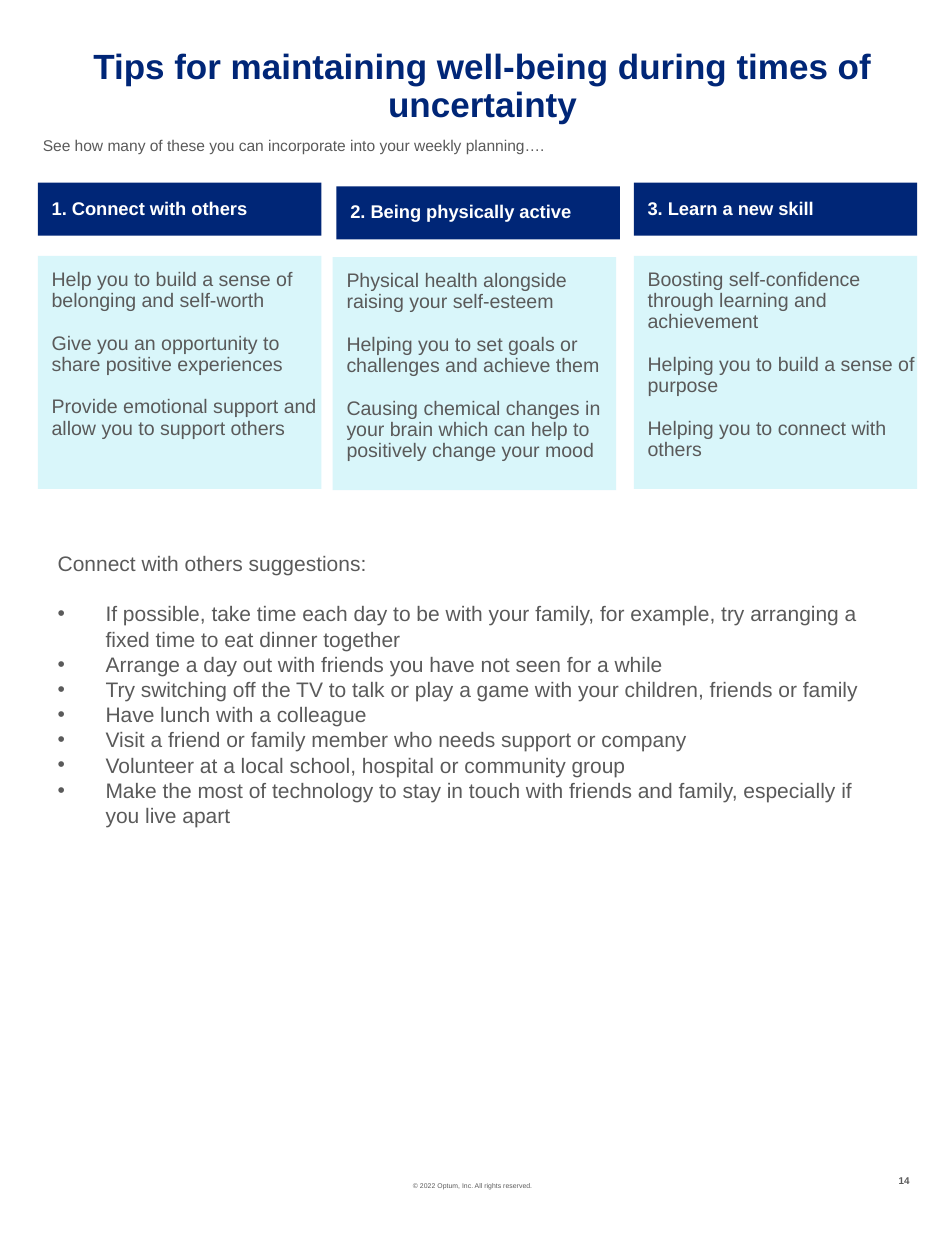
from pptx import Presentation
from pptx.dml.color import RGBColor
from pptx.enum.shapes import MSO_SHAPE
from pptx.enum.text import MSO_ANCHOR, PP_ALIGN
from pptx.oxml.ns import qn
from pptx.util import Inches, Pt
from lxml import etree

RECTANGLE = MSO_SHAPE.RECTANGLE
TOP, MIDDLE = MSO_ANCHOR.TOP, MSO_ANCHOR.MIDDLE
LEFT, CENTER, RIGHT = PP_ALIGN.LEFT, PP_ALIGN.CENTER, PP_ALIGN.RIGHT
WIDTH, HEIGHT = 7.5, 10
NAVY, AQUA, GREY, WHITE = "002677", "D9F6FA", "5A5A5A", "FFFFFF"


def color(value):
    return RGBColor.from_string(value)


class Page:
    """Style and current slide; places are shares of the slide's size."""
    font = "Arial"

    def __init__(self, deck):
        self.slide = deck.slides.add_slide(deck.slide_layouts[6])

    def place(self, left, top, width, height):
        return [Inches(left * WIDTH), Inches(top * HEIGHT),
                Inches(width * WIDTH), Inches(height * HEIGHT)]

    def fill_text(self, box, lines, size, ink=GREY, bold=False, align=LEFT, anchor=TOP,
                  insets=(0, 0, 0, 0), spacing=None, gap=0, wrap=True):
        frame = box.text_frame
        frame.word_wrap = wrap
        frame.vertical_anchor = anchor
        (frame.margin_left, frame.margin_top,
         frame.margin_right, frame.margin_bottom) = map(Inches, insets)
        frame.text = "\n".join(lines)
        for index, para in enumerate(frame.paragraphs):
            para.alignment = align
            if spacing:
                para.line_spacing = spacing
            if index and gap:
                para.space_before = Pt(gap)
            for span in para.runs:
                span.font.name = self.font
                span.font.size = Pt(size)
                span.font.bold = bold
                span.font.color.rgb = color(ink)
        return frame

    def text(self, place, lines, size, **style):
        box = self.slide.shapes.add_textbox(*self.place(*place))
        return self.fill_text(box, lines, size, **style)

    def panel(self, place, fill, lines, size, **style):
        box = self.slide.shapes.add_shape(RECTANGLE, *self.place(*place))
        box.shadow.inherit = False
        box.fill.solid()
        box.fill.fore_color.rgb = color(fill)
        box.line.fill.background()
        return self.fill_text(box, lines, size, spacing=0.9, **style)

    def bullet(self, para, indent):
        props = para._p.get_or_add_pPr()
        props.set("marL", str(Inches(indent)))
        props.set("indent", str(-Inches(indent)))
        etree.SubElement(props, qn("a:buFont")).set("typeface", self.font)
        etree.SubElement(props, qn("a:buChar")).set("char", "•")


# Heading, benefits, then left edges and tops of the header and the card
COLUMNS = [
    ("1. Connect with others",
     ["Help you to build a sense of belonging and self-worth",
      "Give you an opportunity to share positive experiences",
      "Provide emotional support and allow you to support others"],
     (0.3, 1.45), (0.3, 2.03)),
    ("2. Being physically active",
     ["Physical health alongside raising your self-esteem",
      "Helping you to set goals or challenges and achieve them",
      "Causing chemical changes in your brain which can help to "
      "positively change your mood"],
     (2.67, 1.48), (2.64, 2.04)),
    ("3. Learn a new skill",
     ["Boosting self-confidence through learning and achievement",
      "Helping you to build a sense of purpose",
      "Helping you to connect with others"],
     (5.03, 1.45), (5.03, 2.03)),
]
SUGGESTIONS = [
    "If possible, take time each day to be with your family, for example, "
    "try arranging a fixed time to eat dinner together",
    "Arrange a day out with friends you have not seen for a while",
    "Try switching off the TV to talk or play a game with your children, friends or family",
    "Have lunch with a colleague",
    "Visit a friend or family member who needs support or company",
    "Volunteer at a local school, hospital or community group",
    "Make the most of technology to stay in touch with friends and family, "
    "especially if you live apart",
]


def main():
    deck = Presentation()
    deck.slide_width, deck.slide_height = Inches(WIDTH), Inches(HEIGHT)
    page = Page(deck)

    # Footer
    page.text((2.89 / WIDTH, 9.38 / HEIGHT, 1.72 / WIDTH, 0.07 / HEIGHT),
              ["© 2022 Optum, Inc. All rights reserved."], 3.9, align=CENTER)
    page.text((7.12 / WIDTH, 9.32 / HEIGHT, 0.1 / WIDTH, 0.09 / HEIGHT), ["14"], 5.6,
              bold=True, align=RIGHT, wrap=False)

    # Title and lead-in
    page.text((0.22 / WIDTH, 0.39 / HEIGHT, 7.22 / WIDTH, 0.61 / HEIGHT),
              ["Tips for maintaining well-being during times of uncertainty"], 20,
              ink=NAVY, bold=True, align=CENTER, spacing=0.9)
    page.text((0.34 / WIDTH, 1.11 / HEIGHT, 6.96 / WIDTH, 0.13 / HEIGHT),
              ["See how many of these you can incorporate into your weekly planning…."],
              8.9, spacing=0.8)

    # Three columns: header above card
    for heading, benefits, (head_left, head_top), (card_left, card_top) in COLUMNS:
        page.panel((head_left / WIDTH, head_top / HEIGHT, 0.3, 0.42 / HEIGHT), NAVY,
                   [heading], 10.5, ink=WHITE, bold=True, anchor=MIDDLE,
                   insets=(0.11, 0, 0, 0))
        page.panel((card_left / WIDTH, card_top / HEIGHT, 0.3, 1.85 / HEIGHT), AQUA,
                   benefits, 11.2, insets=(0.11, 0.11, 0, 0), gap=12.2)

    # Suggestions
    frame = page.text((0.36 / WIDTH, 4.32 / HEIGHT, 6.7 / WIDTH, 2.32 / HEIGHT),
                      ["Connect with others suggestions:"] + SUGGESTIONS, 12,
                      insets=(0.1, 0.05, 0.1, 0.05))
    bullets = frame.paragraphs[1:]
    bullets[0].space_before = Pt(14.4)
    for para in bullets:
        page.bullet(para, 0.38)

    deck.save("out.pptx")


if __name__ == "__main__":
    main()
